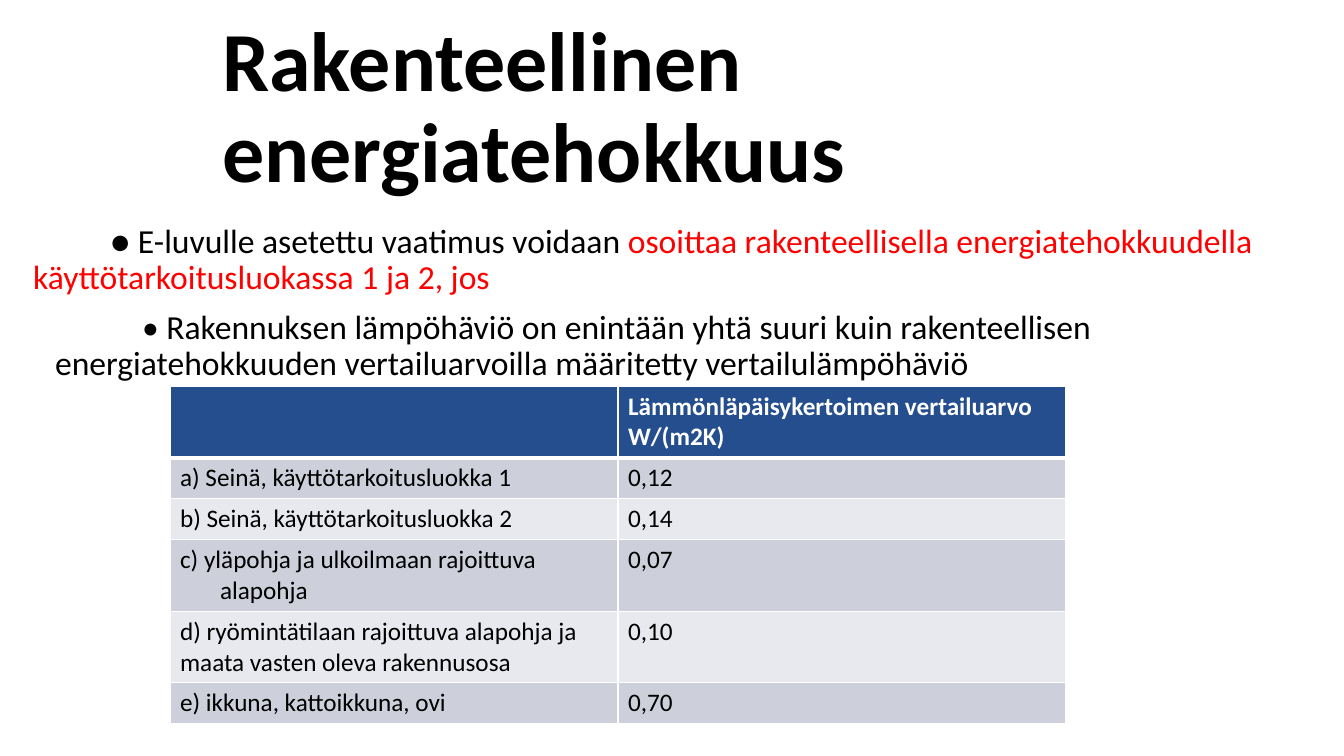
"""Build a slide on structural energy efficiency with a table of reference values."""
import lxml.etree
import pptx
import pptx.dml.color
import pptx.enum.text
import pptx.oxml.ns
import pptx.util

PX = 914400 / 100.8
FONT = "Calibri"
BLACK = pptx.dml.color.RGBColor(0x00, 0x00, 0x00)
WHITE = pptx.dml.color.RGBColor(0xFF, 0xFF, 0xFF)
RED = pptx.dml.color.RGBColor(0xFF, 0x00, 0x00)
NAVY = pptx.dml.color.RGBColor(0x24, 0x4E, 0x8D)
GREY = pptx.dml.color.RGBColor(0xCD, 0xD0, 0xDB)
PALE = pptx.dml.color.RGBColor(0xE8, 0xE9, 0xEE)

REQUIREMENTS = [
    (23, 77, [("● E-luvulle asetettu vaatimus voidaan ", BLACK),
              ("osoittaa rakenteellisella energiatehokkuudella "
               "käyttötarkoitusluokassa 1 ja 2, jos", RED)]),
    (45, 87, [("• Rakennuksen lämpöhäviö on enintään yhtä suuri kuin rakenteellisen "
               "energiatehokkuuden vertailuarvoilla määritetty vertailulämpöhäviö", BLACK)]),
]
REFERENCE_VALUES = [
    (71, "", "Lämmönläpäisykertoimen vertailuarvo W/(m2K)"),
    (41, "a) Seinä, käyttötarkoitusluokka 1", "0,12"),
    (41, "b) Seinä, käyttötarkoitusluokka 2", "0,14"),
    (71, "c) yläpohja ja ulkoilmaan rajoittuva alapohja", "0,07"),
    (71, "d) ryömintätilaan rajoittuva alapohja ja maata vasten oleva rakennusosa", "0,10"),
    (41, "e) ikkuna, kattoikkuna, ovi", "0,70"),
]
HANGING_ROW = 3


def px(n):
    """Turn px into EMU."""
    return pptx.util.Emu(round(n * PX))


def place(sp, left, top, width, height, anchor):
    """Position a placeholder and return its text frame."""
    sp.left, sp.top, sp.width, sp.height = map(px, (left, top, width, height))
    tf = sp.text_frame
    tf.word_wrap = True
    tf.auto_size = pptx.enum.text.MSO_AUTO_SIZE.NONE
    tf.vertical_anchor = anchor
    return tf


def indent(p, margin, first):
    """Set the left margin and first-line indent of a paragraph."""
    pPr = p._p.get_or_add_pPr()
    pPr.set("marL", str(px(margin)))
    pPr.set("indent", str(px(first)))


def add_run(p, text, size, color, bold=False):
    """Add a formatted run."""
    r = p.add_run()
    r.text = text
    r.font.name = FONT
    r.font.size = pptx.util.Pt(size)
    r.font.bold = bold
    r.font.color.rgb = color


def add_title(s):
    """Fill the title placeholder."""
    tf = place(s.shapes.title, 212, 0, 1041, 219, pptx.enum.text.MSO_ANCHOR.MIDDLE)
    p = tf.paragraphs[0]
    p.alignment = pptx.enum.text.PP_ALIGN.LEFT
    p.line_spacing = 0.9
    add_run(p, "Rakenteellinen energiatehokkuus", 60, BLACK, True)


def add_requirements(s):
    """Fill the subtitle placeholder with the requirements."""
    tf = place(s.placeholders[1], 0, 219, 1344, 455, pptx.enum.text.MSO_ANCHOR.TOP)
    for i, (margin, first, runs) in enumerate(REQUIREMENTS):
        p = tf.add_paragraph() if i else tf.paragraphs[0]
        indent(p, margin, first)
        p.alignment = pptx.enum.text.PP_ALIGN.LEFT
        p.line_spacing = 0.9
        p.space_before = pptx.util.Pt(10 if i else 0)
        for text, color in runs:
            add_run(p, text, 24, color)


def set_borders(cell, top, bottom):
    """Draw white borders around a cell, with widths in points."""
    qn = pptx.oxml.ns.qn
    tcPr = cell._tc.get_or_add_tcPr()
    for tag, width in (("a:lnL", 1), ("a:lnR", 1), ("a:lnT", top), ("a:lnB", bottom)):
        ln = lxml.etree.SubElement(tcPr, qn(tag), w=str(pptx.util.Pt(width)))
        fill = lxml.etree.SubElement(ln, qn("a:solidFill"))
        lxml.etree.SubElement(fill, qn("a:srgbClr"), val=str(WHITE))


def add_reference_table(s):
    """Add the table of reference values."""
    height = sum(row[0] for row in REFERENCE_VALUES)
    table = s.shapes.add_table(len(REFERENCE_VALUES), 2, px(170), px(386),
                               px(896), px(height)).table
    for i, (row_height, *texts) in enumerate(REFERENCE_VALUES):
        table.rows[i].height = px(row_height)
        header = i == 0
        for j, text in enumerate(texts):
            cell = table.cell(i, j)
            set_borders(cell, 3 if i == 1 else 1, 3 if header else 1)
            cell.fill.solid()
            cell.fill.fore_color.rgb = NAVY if header else GREY if i % 2 else PALE
            p = cell.text_frame.paragraphs[0]
            if text:
                add_run(p, text, 18, WHITE if header else BLACK, header)
    indent(table.cell(HANGING_ROW, 0).text_frame.paragraphs[0], 40, -40)


def main():
    """Build and save the slide."""
    prs = pptx.Presentation()
    prs.slide_width, prs.slide_height = px(1344), px(756)
    s = prs.slides.add_slide(prs.slide_layouts[0])
    add_title(s)
    add_requirements(s)
    add_reference_table(s)
    prs.save("out.pptx")


if __name__ == "__main__":
    main()
